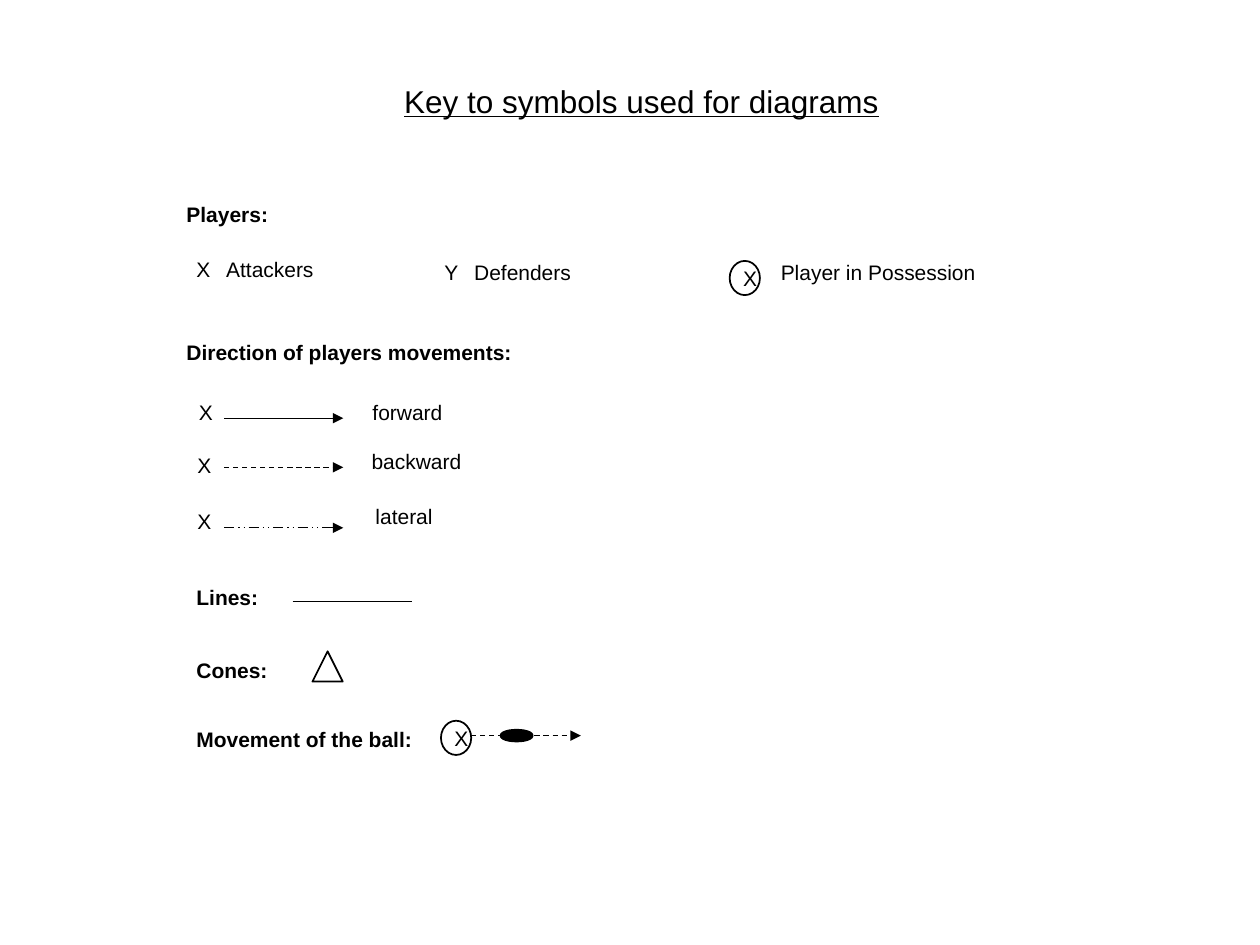
from dataclasses import dataclass, field
from typing import Optional

from lxml.etree import SubElement
from pptx import Presentation
from pptx.dml.color import RGBColor
from pptx.enum.dml import MSO_LINE_DASH_STYLE as Dash
from pptx.enum.shapes import MSO_CONNECTOR as Link, MSO_SHAPE as Preset
from pptx.enum.text import MSO_ANCHOR as Anchor, MSO_AUTO_SIZE as Fit, PP_ALIGN as Align
from pptx.oxml.ns import qn
from pptx.util import Cm, Pt

COLOURS = {"ink": "000000", "paper": "FFFFFF"}
BODY = {"name": "Arial", "size": Pt(12)}
HEADING = {**BODY, "bold": True}
TITLE = {**BODY, "size": Pt(18), "underline": True}


@dataclass
class Label:
    text: str
    left: float
    top: float
    width: float
    height: float = 0.77
    wrap: bool = False
    style: dict = field(default_factory=lambda: BODY)


@dataclass
class Stroke:
    left: float
    top: float
    length: float
    dash: Optional[Dash] = None
    arrow: bool = True


@dataclass
class Symbol:
    preset: Preset
    left: float
    top: float
    width: float
    height: float
    line: float = 1
    text: str = ""
    filled: bool = False


@dataclass
class Movement:
    name: str
    dash: Optional[Dash]
    marker: tuple[float, float]
    line_top: float
    label: tuple[float, float, float]


def colour(name: str) -> RGBColor:
    return RGBColor.from_string(COLOURS[name])


def write(para, text: str, style: dict) -> None:
    span = para.add_run()
    span.text = text
    for key, value in style.items():
        setattr(span.font, key, value)
    span.font.color.rgb = colour("ink")


def draw_label(page, label: Label) -> None:
    box = page.shapes.add_textbox(
        Cm(label.left), Cm(label.top), Cm(label.width), Cm(label.height))
    frame = box.text_frame
    frame.word_wrap = label.wrap
    frame.auto_size = Fit.SHAPE_TO_FIT_TEXT
    para = frame.paragraphs[0]
    write(para, label.text, label.style)
    if "\t" in label.text:
        stops = SubElement(para._p.get_or_add_pPr(), qn("a:tabLst"))
        SubElement(stops, qn("a:tab"), pos=str(Cm(0.6)), algn="l")


def draw_stroke(page, stroke: Stroke) -> None:
    line = page.shapes.add_connector(
        Link.STRAIGHT, Cm(stroke.left), Cm(stroke.top),
        Cm(stroke.left + stroke.length), Cm(stroke.top))
    line.line.width = Pt(0.75)
    line.line.color.rgb = colour("ink")
    if stroke.dash is not None:
        line.line.dash_style = stroke.dash
    if stroke.arrow:
        SubElement(line.line._get_or_add_ln(), qn("a:tailEnd"), type="triangle")
    SubElement(line._element.spPr, qn("a:effectLst"))


def draw_symbol(page, symbol: Symbol) -> None:
    shape = page.shapes.add_shape(
        symbol.preset, Cm(symbol.left), Cm(symbol.top),
        Cm(symbol.width), Cm(symbol.height))
    shape.shadow.inherit = False
    if symbol.filled:
        shape.fill.solid()
        shape.fill.fore_color.rgb = colour("ink")
    else:
        shape.fill.background()
    shape.line.width = Pt(symbol.line)
    shape.line.color.rgb = colour("ink")
    if symbol.text:
        shape.text_frame.vertical_anchor = Anchor.MIDDLE
        para = shape.text_frame.paragraphs[0]
        para.alignment = Align.CENTER
        write(para, symbol.text, BODY)


def ball_carrier(left: float, top: float) -> Symbol:
    return Symbol(Preset.OVAL, left, top, 0.61, 0.69, text="X")


LABELS = [
    Label("Key to symbols used for diagrams", 7.9, 1.52, 10.16, 1.02, style=TITLE),
    Label("Players:", 3.51, 3.94, 2.16, style=HEADING),
    Label("X\tAttackers", 3.71, 5.05, 5, wrap=True),
    Label("Y\tDefenders", 8.71, 5.11, 5, wrap=True),
    Label("Player in Possession", 15.49, 5.11, 7.19, wrap=True),
    Label("Direction of players movements:", 3.51, 6.73, 7.14, style=HEADING),
    Label("Lines:", 3.71, 11.66, 1.78, style=HEADING),
    Label("Cones:", 3.71, 13.13, 1.96, style=HEADING),
    Label("Movement of the ball:", 3.71, 14.53, 4.9, style=HEADING),
]
MOVEMENTS = [
    Movement("forward", None, (3.76, 7.92), 8.43, (7.26, 7.92, 2.06)),
    Movement("backward", Dash.DASH, (3.73, 8.99), 9.42, (7.24, 8.92, 2.34)),
    Movement("lateral", Dash.DASH_DOT_DOT, (3.73, 10.13), 10.64, (7.32, 10.03, 1.68)),
]
STROKES = [
    Stroke(5.9, 12.12, 2.4, arrow=False),
    Stroke(9.5, 14.83, 2.21, Dash.DASH),
]
SYMBOLS = [
    ball_carrier(14.71, 5.26),
    Symbol(Preset.ISOSCELES_TRIANGLE, 6.3, 13.13, 0.61, 0.61),
    ball_carrier(8.89, 14.53),
    Symbol(Preset.OVAL, 10.11, 14.73, 0.61, 0.2, line=2, filled=True),
]


def main() -> None:
    deck = Presentation()
    deck.slide_width, deck.slide_height = Cm(25.4), Cm(19.05)
    page = deck.slides.add_slide(deck.slide_layouts[6])
    page.background.fill.solid()
    page.background.fill.fore_color.rgb = colour("paper")
    for label in LABELS:
        draw_label(page, label)
    for move in MOVEMENTS:
        draw_label(page, Label("X", *move.marker, 0.91))
        draw_stroke(page, Stroke(4.52, move.line_top, 2.4, move.dash))
        draw_label(page, Label(move.name, *move.label))
    for stroke in STROKES:
        draw_stroke(page, stroke)
    for symbol in SYMBOLS:
        draw_symbol(page, symbol)
    deck.save("out.pptx")


if __name__ == "__main__":
    main()
